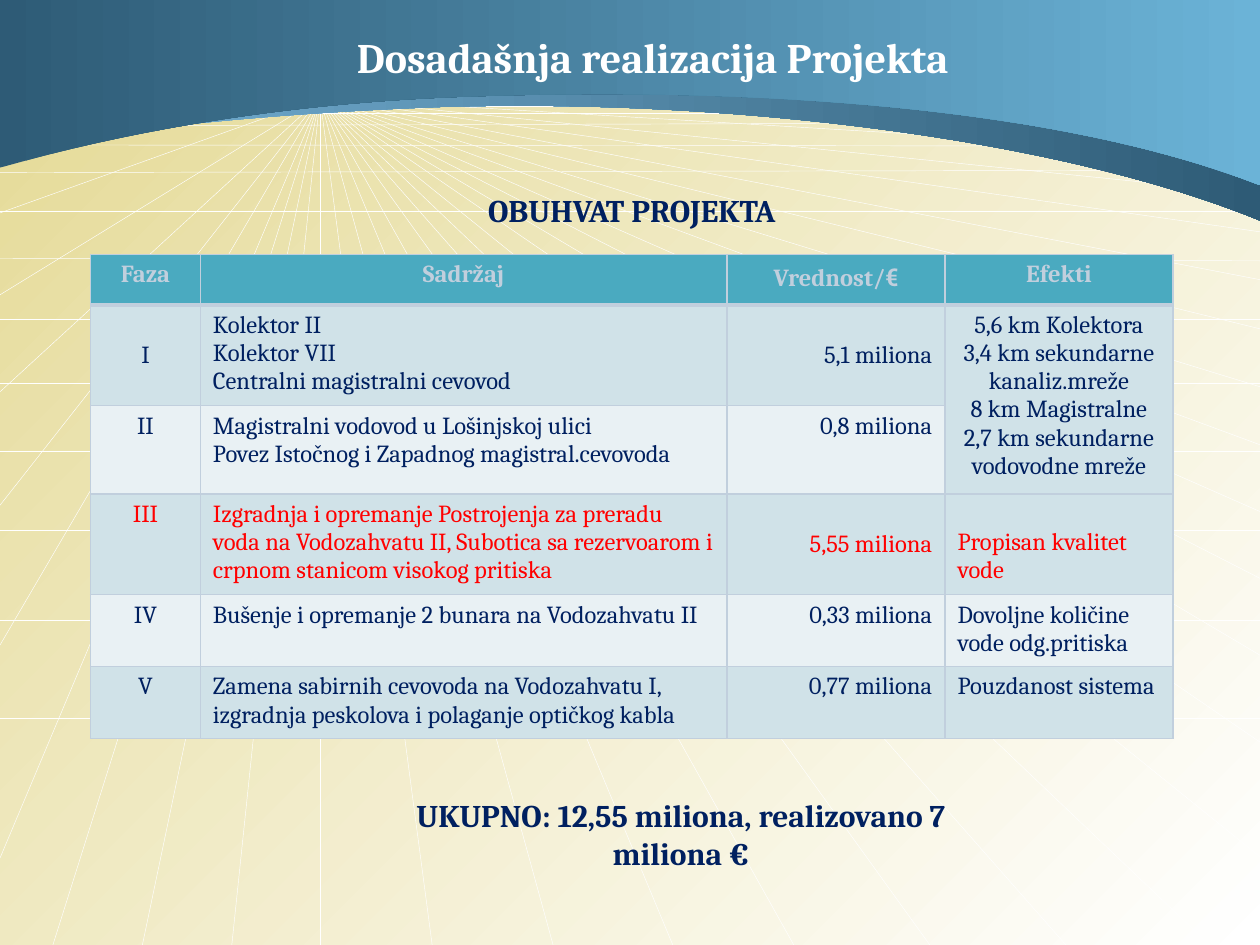
from lxml.etree import SubElement
from pptx import Presentation
from pptx.dml.color import RGBColor
from pptx.enum.shapes import MSO_CONNECTOR
from pptx.enum.text import MSO_ANCHOR as ANCHOR, MSO_AUTO_SIZE as AUTOSIZE, PP_ALIGN as ALIGN
from pptx.oxml.ns import qn
from pptx.util import Inches, Pt

W, H = 10, 7.5
FONT, EURO_FONT = "Cambria", "Roboto Slab"
COLORS = {
    "sand": "E4D994", "white": "FFFFFF", "sky": "6BB3D7", "pale_sky": "77B3D7",
    "deep": "2E5B76", "navy": "002060", "red": "FF0000", "header": "4AAAC0",
    "border": "C1CFDD", "band": "D0E2E8", "light_band": "E9F1F4",
}

TITLE = "Dosadašnja realizacija Projekta"
LABELS = [
    ("OBUHVAT PROJEKTA", (2.48, 1.47, 5.07, 0.4)),
    ("UKUPNO: 12,55 miliona, realizovano 7 miliona €", (2.87, 6.27, 5.07, 0.71)),
]
ROWS = [
    ["Faza", "Sadržaj", "Vrednost/€", "Efekti"],
    ["I", "Kolektor II\nKolektor VII\nCentralni magistralni cevovod", "5,1 miliona",
     "5,6 km Kolektora\n3,4 km sekundarne\nkanaliz.mreže\n8 km Magistralne\n"
     "2,7 km sekundarne\nvodovodne mreže"],
    ["II", "Magistralni vodovod u Lošinjskoj ulici\nPovez Istočnog i Zapadnog magistral.cevovoda",
     "0,8 miliona", ""],
    ["III", "Izgradnja i opremanje Postrojenja za preradu voda na Vodozahvatu II, "
     "Subotica sa rezervoarom i crpnom stanicom visokog pritiska",
     "5,55 miliona", "Propisan kvalitet\nvode"],
    ["IV", "Bušenje i opremanje 2 bunara na Vodozahvatu II", "0,33 miliona",
     "Dovoljne količine vode odg.pritiska"],
    ["V", "Zamena sabirnih cevovoda na Vodozahvatu I, izgradnja peskolova i polaganje optičkog kabla",
     "0,77 miliona", "Pouzdanost sistema"],
]
TABLE_AT = (0.72, 2.02)
COL_WIDTHS = [0.87, 4.18, 1.73, 1.81]
ROW_HEIGHTS = [0.4, 0.8, 0.7, 0.8, 0.57, 0.57]
COL_ALIGN = [ALIGN.CENTER, ALIGN.LEFT, ALIGN.RIGHT, ALIGN.LEFT]
EFFECTS_CELL = (1, 3)
RED_ROW = 3
ANCHORS = {(1, 0): ANCHOR.MIDDLE, (1, 2): ANCHOR.MIDDLE,
           (3, 2): ANCHOR.MIDDLE, (3, 3): ANCHOR.BOTTOM}
BOTTOM_MARGIN = 0.08

RAY_ORIGIN = (2.54, 0.78)
RAY_RIGHT = [1, 1.23, 1.54, 1.84, 2.22, 2.61, 3.07, 3.53, 4.06, 4.59, 5.2, 5.89, 6.8]
RAY_BOTTOM = [0.42, 1.13, 1.84, 2.54, 3.43, 4.39, 5.34, 6.3, 7.38, 8.46, 9.6]
RAY_LEFT = [0.78, 0.97, 1.16, 1.16, 1.69, 2.34, 3.11, 4.01, 5.12, 6.81]
LEVELS = [(0.84, 0.84), (0.9, 0.9), (1, 0.97), (1.15, 1.16), (1.37, 1.35), (1.68, 1.68),
          (2.05, 2.07), (2.53, 2.53), (3.04, 3.04), (3.58, 3.58), (4.21, 4.21),
          (4.92, 4.92), (5.7, 5.7)]
WAVES = [
    ([(0, 1.19), (0.11, 1.18), (1.33, 0.93), (3.47, 0.85),
      (5.61, 0.78), (8.31, 1.06), (W, 1.75)], ("pale_sky", "deep")),
    ([(0, 1.33), (0.11, 1.31), (1.51, 0.85), (3.64, 0.77),
      (5.77, 0.69), (8.31, 0.81), (W, 1.47)], ("deep", "sky")),
]


def rgb(name):
    return RGBColor.from_string(COLORS[name])


def set_gradient(fill, names, angle):
    fill.gradient()
    fill.gradient_angle = angle
    for stop, name in zip(fill.gradient_stops, names):
        stop.color.rgb = rgb(name)


def add_line(s, start, end):
    line = s.shapes.add_connector(MSO_CONNECTOR.STRAIGHT, *map(Inches, start + end))
    line.line.color.rgb = rgb("white")
    line.line.width = Pt(0.25)
    SubElement(line.element.spPr, qn("a:effectLst"))


def curve_segments(shape, first, count):
    segments = list(shape.element.iter(qn("a:lnTo")))[first:first + 3 * count]
    for i in range(0, len(segments), 3):
        curve = SubElement(segments[i].getparent(), qn("a:cubicBezTo"))
        segments[i].addprevious(curve)
        for segment in segments[i:i + 3]:
            curve.append(segment[0])
            segment.getparent().remove(segment)


def add_wave(s, points, names):
    builder = s.shapes.build_freeform(0, 0)
    outline = [(Inches(x), Inches(y)) for x, y in points + [(W, 0)]]
    builder.add_line_segments(outline, close=True)
    wave = builder.convert_to_shape()
    curve_segments(wave, 1, 2)
    wave.shadow.inherit = False
    wave.line.fill.background()
    set_gradient(wave.fill, names, 0)


def format_text(tf, size, color, bold, align):
    for p in tf.paragraphs:
        p.alignment = align
        for r in p.runs:
            r.font.name = FONT
            r.font.size = Pt(size)
            r.font.bold = bold
            r.font.color.rgb = rgb(color)


def set_borders(cell, widths):
    tc_pr = cell._tc.get_or_add_tcPr()
    for side, width in zip("LRTB", widths):
        ln = SubElement(tc_pr, qn(f"a:ln{side}"), w=str(Pt(width)))
        SubElement(SubElement(ln, qn("a:solidFill")), qn("a:srgbClr"), val=COLORS["border"])


def fill_cell(cell, row, col, text):
    header = row == 0
    set_borders(cell, (1, 1, 3 if row == 1 else 1, 3 if header else 1))
    cell.fill.solid()
    cell.fill.fore_color.rgb = rgb("header" if header else "band" if row % 2 else "light_band")
    cell.vertical_anchor = ANCHORS.get((row, col), ANCHOR.TOP)
    if cell.vertical_anchor == ANCHOR.BOTTOM:
        cell.margin_bottom = Inches(BOTTOM_MARGIN)
    tf = cell.text_frame
    tf.text = text
    if header and text.endswith("€"):
        p = tf.paragraphs[0]
        p.text = text[:-1]
        p.add_run().text = "€"
    centered = header or (row, col) == EFFECTS_CELL
    color = "border" if header else "red" if row == RED_ROW else "navy"
    format_text(tf, 14, color, header, ALIGN.CENTER if centered else COL_ALIGN[col])
    for r in tf.paragraphs[0].runs:
        if r.text == "€":
            r.font.name = EURO_FONT


def add_phase_table(s):
    frame = s.shapes.add_table(len(ROWS), len(COL_WIDTHS), *map(Inches, TABLE_AT),
                               Inches(sum(COL_WIDTHS)), Inches(sum(ROW_HEIGHTS)))
    table = frame.table
    for column, width in zip(table.columns, COL_WIDTHS):
        column.width = Inches(width)
    for row, height in zip(table.rows, ROW_HEIGHTS):
        row.height = Inches(height)
    for i, texts in enumerate(ROWS):
        for j, text in enumerate(texts):
            fill_cell(table.cell(i, j), i, j, text)
    row, col = EFFECTS_CELL
    table.cell(row, col).merge(table.cell(row + 1, col))


def main():
    prs = Presentation()
    prs.slide_width, prs.slide_height = Inches(W), Inches(H)
    s = prs.slides.add_slide(prs.slide_layouts[5])
    set_gradient(s.background.fill, ("sand", "white"), 315)

    ray_ends = ([(W, y) for y in RAY_RIGHT] + [(x, H) for x in RAY_BOTTOM]
                + [(0, y) for y in RAY_LEFT])
    for end in ray_ends:
        add_line(s, RAY_ORIGIN, end)
    for left_y, right_y in LEVELS:
        add_line(s, (0, left_y), (W, right_y))
    for points, names in WAVES:
        add_wave(s, points, names)

    title = s.shapes.title
    title.element.getparent().append(title.element)
    title.left, title.top, title.width, title.height = map(Inches, (1.14, 0.14, 8.08, 0.62))
    tf = title.text_frame
    tf.text = TITLE
    tf.auto_size = AUTOSIZE.NONE
    tf.vertical_anchor = ANCHOR.MIDDLE
    format_text(tf, 24, "white", True, ALIGN.CENTER)

    add_phase_table(s)
    for text, box in LABELS:
        tf = s.shapes.add_textbox(*map(Inches, box)).text_frame
        tf.word_wrap = True
        tf.auto_size = AUTOSIZE.SHAPE_TO_FIT_TEXT
        tf.text = text
        format_text(tf, 18, "navy", True, ALIGN.CENTER)
    prs.save("out.pptx")


if __name__ == "__main__":
    main()
